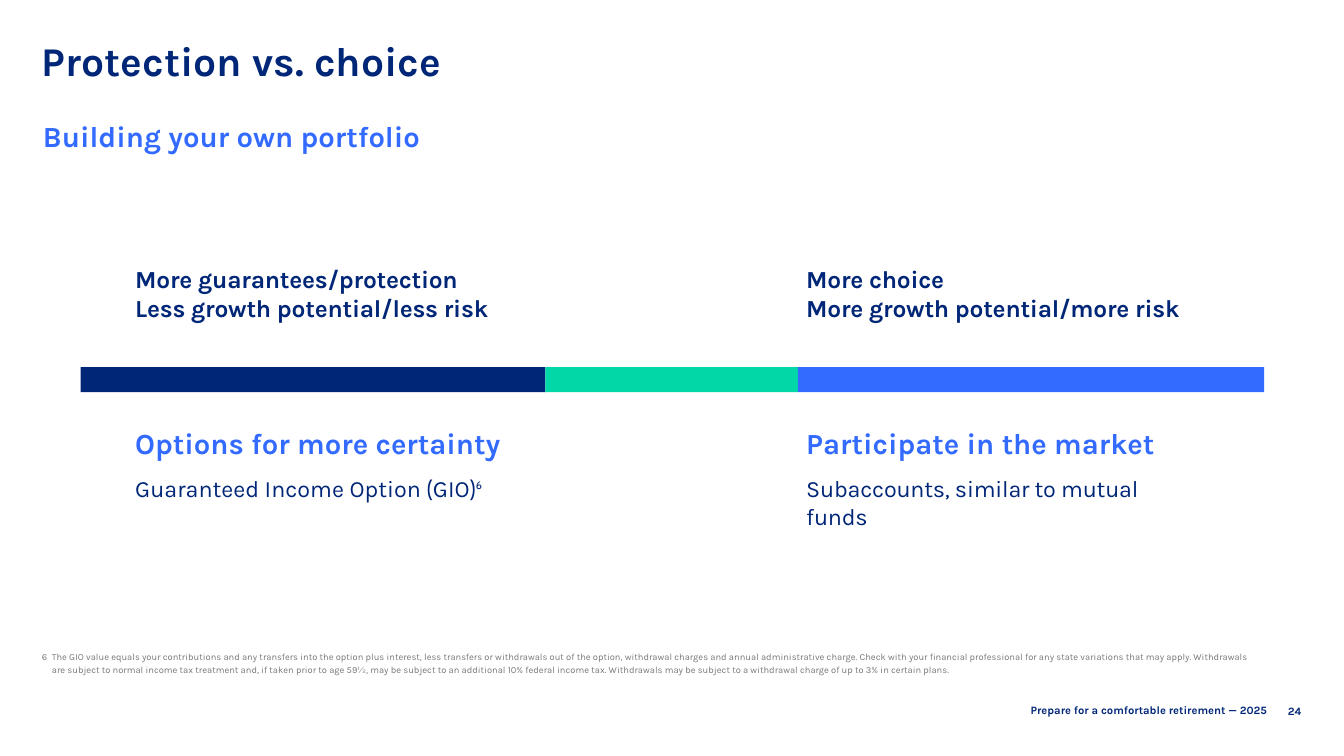
from pptx import Presentation
from pptx import util as u
from pptx.dml.color import RGBColor
from pptx.enum import shapes, text

NAVY = RGBColor(0x00, 0x26, 0x77)
BLUE = RGBColor(0x33, 0x6A, 0xFF)
GREEN = RGBColor(0x00, 0xD9, 0xA7)
GREY = RGBColor(0x75, 0x78, 0x7B)


def style(para, size, color, bold=False, tracking=None):
    for span in para.runs:
        span.font.name = "Karla"
        span.font.size = u.Pt(size)
        span.font.bold = bold
        span.font.color.rgb = color
        if tracking is not None:
            span._r.get_or_add_rPr().set("spc", str(round(tracking * 100)))


def add_text(page, box, words, size, color, bold=True, inset_top=0.13, tracking=None):
    frame = page.shapes.add_textbox(*map(u.Cm, box)).text_frame
    frame.word_wrap = True
    frame.margin_top = u.Cm(inset_top)
    frame.text = words
    for para in frame.paragraphs:
        style(para, size, color, bold, tracking)
    return frame


def add_heading(page, left, top):
    title = add_text(page, (left, top, 27.94, 1.6), "Protection vs. choice", 35, NAVY)
    title.paragraphs[0].line_spacing = 0.9
    subtitle = add_text(page, (left + 0.03, top + 2.69, 19.28, 1.65),
                        "Building your own portfolio", 25, BLUE, inset_top=0.25)
    subtitle.paragraphs[0].line_spacing = u.Pt(16)


def add_side(page, left, top, traits, heading, parts):
    add_text(page, (left, top, 13, 2.72), traits, 21, NAVY, tracking=-0.2)
    details = add_text(page, (left, top + 5.13, 12.45, 2.69), heading, 25, BLUE, inset_top=0.51)
    details.paragraphs[0].line_spacing = u.Pt(12)
    para = details.add_paragraph()
    para.space_before = u.Pt(12)
    for part in parts:
        para.add_run().text = part
    style(para, 20, NAVY, tracking=-0.2 if len(parts) == 1 else None)
    return para


def add_scale(page, left, top, height, segments):
    for width, color in segments:
        segment = page.shapes.add_shape(shapes.MSO_SHAPE.RECTANGLE,
                                        *map(u.Cm, (left, top, width, height)))
        segment.shadow.inherit = False
        segment.fill.solid()
        segment.fill.fore_color.rgb = color
        segment.line.fill.background()
        left += width


def add_footnote(page, box, words):
    frame = add_text(page, box, words, 8, GREY, bold=False)
    frame.vertical_anchor = text.MSO_ANCHOR.BOTTOM
    frame.margin_bottom = 0
    para = frame.paragraphs[0]
    para.line_spacing = u.Pt(11)
    properties = para._p.get_or_add_pPr()
    properties.set("marL", str(u.Cm(0.3)))
    properties.set("indent", str(-u.Cm(0.3)))


def add_footer(page, left, top):
    label = add_text(page, (left, top, 13.72, 0.61),
                     "Prepare for a comfortable retirement — 2025", 9.6, NAVY)
    label.vertical_anchor = text.MSO_ANCHOR.MIDDLE
    number = add_text(page, (left + 13.74, top, 1.02, 0.48), "24", 9.6, NAVY)
    for frame in (label, number):
        frame.paragraphs[0].alignment = text.PP_ALIGN.RIGHT


def main():
    deck = Presentation()
    deck.slide_width, deck.slide_height = u.Cm(40.64), u.Cm(22.86)
    page = deck.slides.add_slide(deck.slide_layouts[6])
    add_heading(page, 1.02, 1.12)
    certainty = add_side(page, 3.84, 7.85,
                         "More guarantees/protection\nLess growth potential/less risk",
                         "Options for more certainty",
                         ["Guaranteed Income Option ", "(", "GIO", ")", "6"])
    for bracket in (certainty.runs[1], certainty.runs[3]):
        bracket.font.name = "Cabin"
    marker = certainty.runs[4]
    marker.font.name = "Cabin"
    marker.font.size = u.Pt(16)
    marker._r.get_or_add_rPr().set("baseline", "40000")
    add_side(page, 24.13, 7.85, "More choice\nMore growth potential/more risk",
             "Participate in the market", ["Subaccounts, similar to mutual funds"])
    add_scale(page, 2.44, 11.1, 0.76, [(14.05, NAVY), (7.64, GREEN), (14.1, BLUE)])
    add_footnote(page, (1.02, 17.5, 37.13, 2.92),
                 "6\tThe GIO value equals your contributions and any transfers into the option plus "
                 "interest, less transfers or withdrawals out of the option, withdrawal charges and "
                 "annual administrative charge. Check with your financial professional for any state "
                 "variations that may apply. Withdrawals are subject to normal income tax treatment "
                 "and, if taken prior to age 59½, may be subject to an additional 10% federal income "
                 "tax. Withdrawals may be subject to a withdrawal charge of up to 3% in certain plans.")
    add_footer(page, 24.84, 21.16)
    deck.save("out.pptx")


if __name__ == "__main__":
    main()
